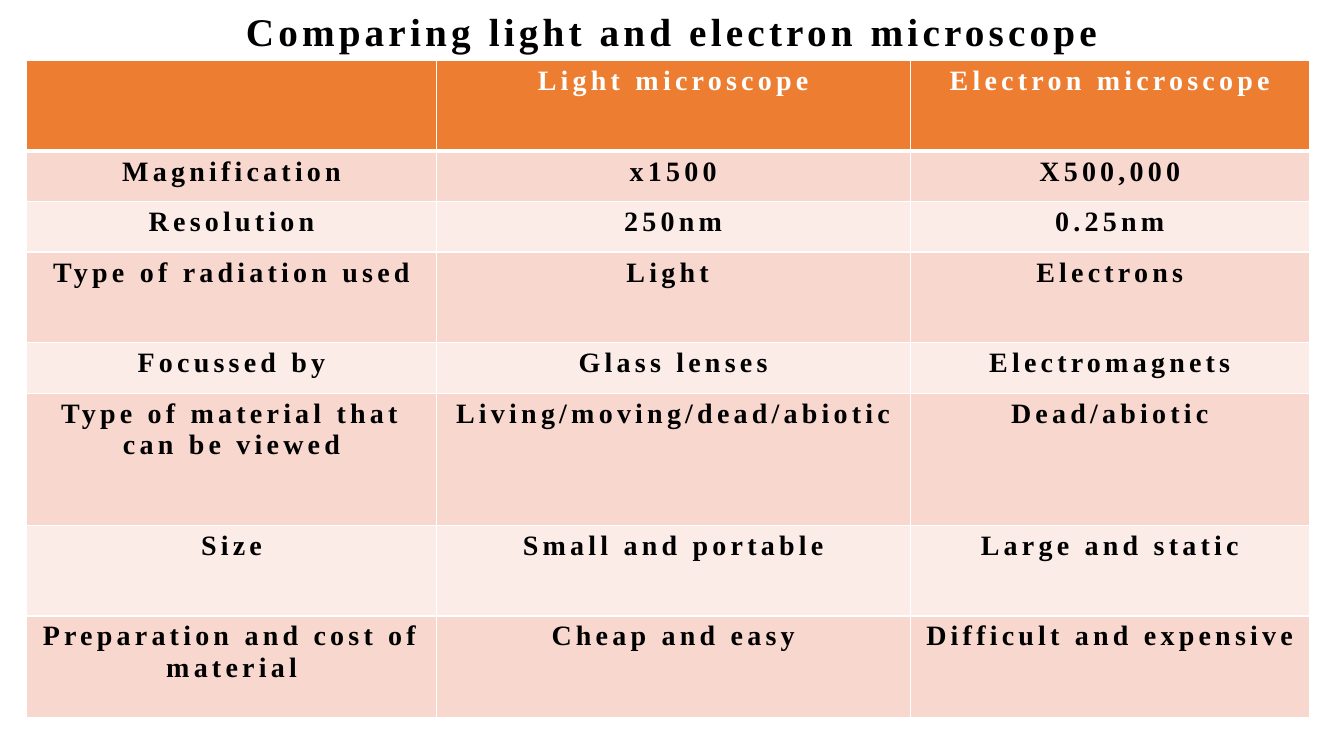
from lxml.etree import SubElement
from pptx import Presentation
from pptx.dml.color import RGBColor
from pptx.enum.text import MSO_ANCHOR, MSO_AUTO_SIZE, PP_ALIGN
from pptx.oxml.ns import qn
from pptx.util import Inches, Pt

COLORS = {
    "text": "000000",
    "light": "FFFFFF",
    "header": "ED7D31",
    "odd": "F8D7CE",
    "even": "FCECE8",
}
COLUMN_PERCENTS = [30.46, 35.26, 29.71]
ROW_PERCENTS = [12, 6.67, 6.67, 12, 6.67, 17.47, 12, 13.47]
COMPARISON = [
    ("", "Light microscope", "Electron microscope"),
    ("Magnification", "x1500", "X500,000"),
    ("Resolution", "250nm", "0.25nm"),
    ("Type of radiation used", "Light ", "Electrons"),
    ("Focussed by", "Glass lenses", "Electromagnets"),
    ("Type of material that can be viewed", "Living/moving/dead/abiotic", "Dead/abiotic"),
    ("Size", "Small and portable", "Large and static"),
    ("Preparation and cost of material", "Cheap and easy", "Difficult and expensive"),
]


def write_text(text_frame, text, size=20, color="text", line_spacing=1.0, letter_spacing=3):
    paragraph = text_frame.paragraphs[0]
    paragraph.alignment = PP_ALIGN.CENTER
    paragraph.line_spacing = line_spacing
    if not text:
        return
    run = paragraph.add_run()
    run.text = text
    run.font.name = "Times New Roman"
    run.font.size = Pt(size)
    run.font.bold = True
    run.font.color.rgb = RGBColor.from_string(COLORS[color])
    run.font._element.set("spc", str(letter_spacing * 100))


class SlideBuilder:
    def __init__(self, presentation):
        self.width = presentation.slide_width
        self.height = presentation.slide_height
        self.slide = presentation.slides.add_slide(presentation.slide_layouts[5])

    def across(self, percent):
        return round(self.width * percent / 100)

    def down(self, percent):
        return round(self.height * percent / 100)

    def title(self, text, left, top, width, height):
        shape = self.slide.shapes.title
        shape.left, shape.top = self.across(left), self.down(top)
        shape.width, shape.height = self.across(width), self.down(height)
        text_frame = shape.text_frame
        text_frame.word_wrap = True
        text_frame.auto_size = MSO_AUTO_SIZE.NONE
        text_frame.vertical_anchor = MSO_ANCHOR.MIDDLE
        write_text(text_frame, text, size=28, line_spacing=0.9)

    def borders(self, cell, top, bottom):
        properties = cell._tc.get_or_add_tcPr()
        for side, points in {"lnL": 1, "lnR": 1, "lnT": top, "lnB": bottom}.items():
            line = SubElement(properties, qn(f"a:{side}"), w=str(Pt(points)))
            fill = SubElement(line, qn("a:solidFill"))
            SubElement(fill, qn("a:srgbClr"), val=COLORS["light"])

    def table(self, rows, left, top, columns, heights):
        table = self.slide.shapes.add_table(
            len(rows), len(columns), self.across(left), self.down(top),
            self.across(sum(columns)), self.down(sum(heights))).table
        for column, percent in zip(table.columns, columns):
            column.width = self.across(percent)
        for row, percent in zip(table.rows, heights):
            row.height = self.down(percent)
        for index, texts in enumerate(rows):
            band = "header" if index == 0 else "odd" if index % 2 else "even"
            for cell, text in zip(table.rows[index].cells, texts):
                self.borders(cell, top=3 if index == 1 else 1, bottom=3 if index == 0 else 1)
                cell.fill.solid()
                cell.fill.fore_color.rgb = RGBColor.from_string(COLORS[band])
                write_text(cell.text_frame, text, color="light" if index == 0 else "text")


def main():
    presentation = Presentation()
    presentation.slide_width = Inches(13.33)
    presentation.slide_height = Inches(7.5)
    builder = SlideBuilder(presentation)
    builder.title("Comparing light and electron microscope", left=1, top=0.67, width=98, height=7.47)
    builder.table(COMPARISON, left=2, top=8, columns=COLUMN_PERCENTS, heights=ROW_PERCENTS)
    presentation.save("out.pptx")


if __name__ == "__main__":
    main()
